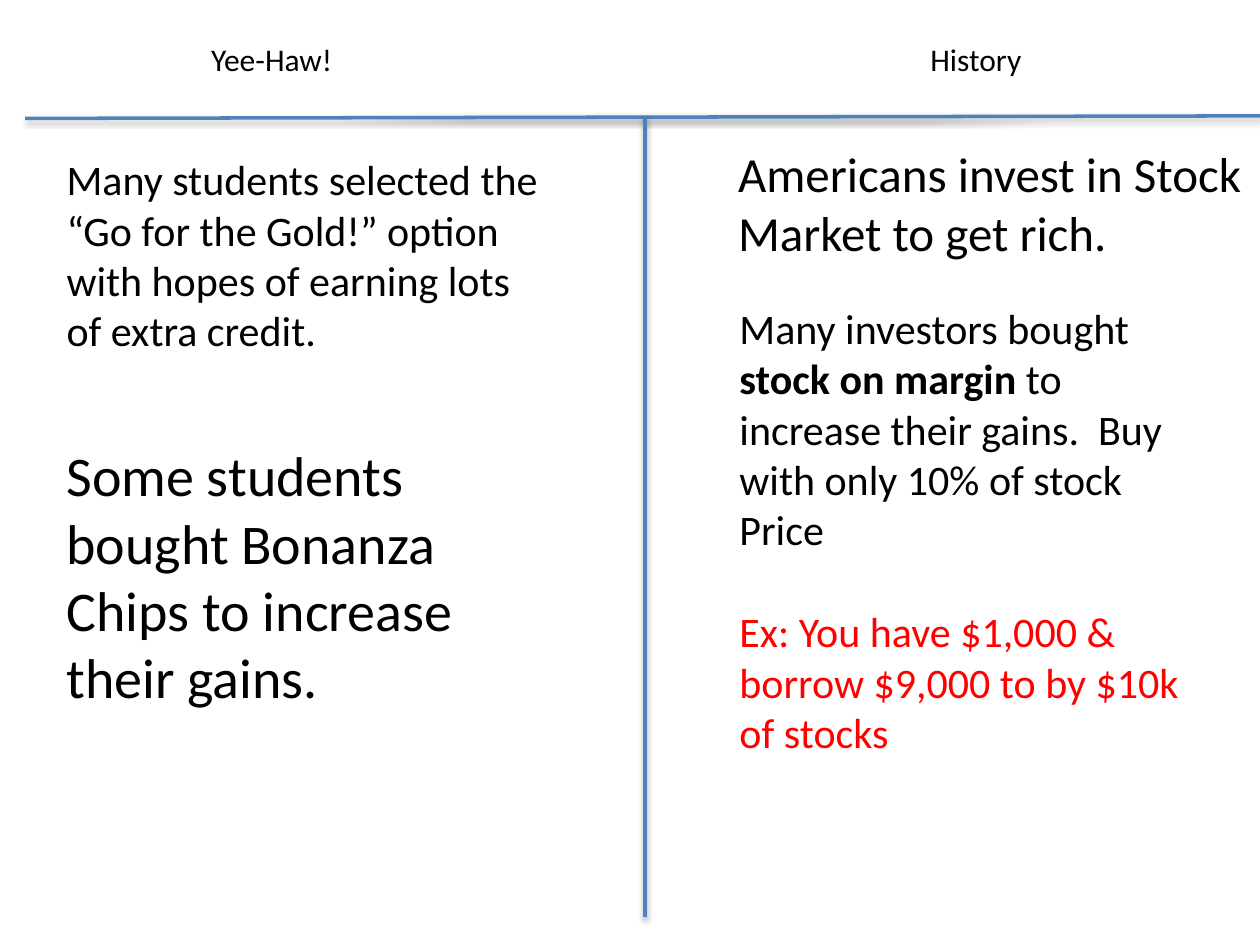
"""Build a two-column slide that sets a class game beside history."""
from lxml.etree import SubElement as Sub
from pptx import Presentation
from pptx.dml.color import RGBColor
from pptx.enum.shapes import MSO_CONNECTOR as Conn
from pptx.enum.text import MSO_AUTO_SIZE as Auto, PP_ALIGN as Align
from pptx.oxml.ns import qn
from pptx.util import Inches, Pt


def tint(code):
    return RGBColor.from_string(code)


deck = Presentation()
deck.slide_width, deck.slide_height = Inches(10), Inches(7.5)
slide = deck.slides.add_slide(deck.slide_layouts[6])

rules = [(0.2, 0.94, 10, 0.92), (5.12, 0.92, 5.12, 7.28)]
shade = {"blurRad": "40000", "dist": "20000", "dir": "5400000", "rotWithShape": "0"}
for ends in rules:
    rule = slide.shapes.add_connector(Conn.STRAIGHT, *[Inches(n) for n in ends])
    rule.line.color.rgb = tint("4F81BD")
    rule.line.width = Pt(2)
    fx = Sub(rule._element.spPr, qn("a:effectLst"))
    cast = Sub(fx, qn("a:outerShdw"), shade)
    hue = Sub(cast, qn("a:srgbClr"), val="000000")
    Sub(hue, qn("a:alpha"), val="38000")

black, red = "000000", "FF0000"
left, right = Align.LEFT, Align.CENTER
notes = [
    ((5.76, 0.27, 3.97, 0.4), 18, Align.CENTER, [(black, ["History"])]),
    ((0.2, 0.27, 3.97, 0.4), 18, Align.CENTER, [(black, ["Yee-Haw! "])]),
    ((5.76, 1.09, 4.34, 1.04), 28, Align.LEFT,
     [(black, ["Americans invest in Stock Market to get rich."])]),
    ((5.77, 2.35, 3.75, 4.95), 24, Align.LEFT,
     [(black, ["Many investors bought ", "stock on margin ",
               "to increase their gains.  Buy with only 10% of stock Price"]),
      (red, ["Ex: You have $1,000 & borrow $9,000 to by $10k of stocks"])]),
    ((0.43, 1.17, 3.97, 1.72), 24, Align.LEFT,
     [(black, ["Many students selected the “Go for the Gold!” option "
               "with hopes of earning lots of extra credit."])]),
    ((0.43, 3.45, 4.14, 2.26), 32, Align.LEFT,
     [(black, ["Some students bought Bonanza Chips to increase their gains."])]),
]
for spot, size, align, paras in notes:
    frame = slide.shapes.add_textbox(*[Inches(n) for n in spot]).text_frame
    frame.word_wrap = True
    frame.auto_size = Auto.SHAPE_TO_FIT_TEXT
    for i, (color, parts) in enumerate(paras):
        para = frame.add_paragraph() if i else frame.paragraphs[0]
        para.alignment = align
        para.space_before = Pt(29.3 * i)
        for j, words in enumerate(parts):
            run = para.add_run()
            run.text = words
            look = {"name": "Calibri", "size": Pt(size), "bold": j == 1}
            for key, val in look.items():
                setattr(run.font, key, val)
            run.font.color.rgb = tint(color)

deck.save("out.pptx")
